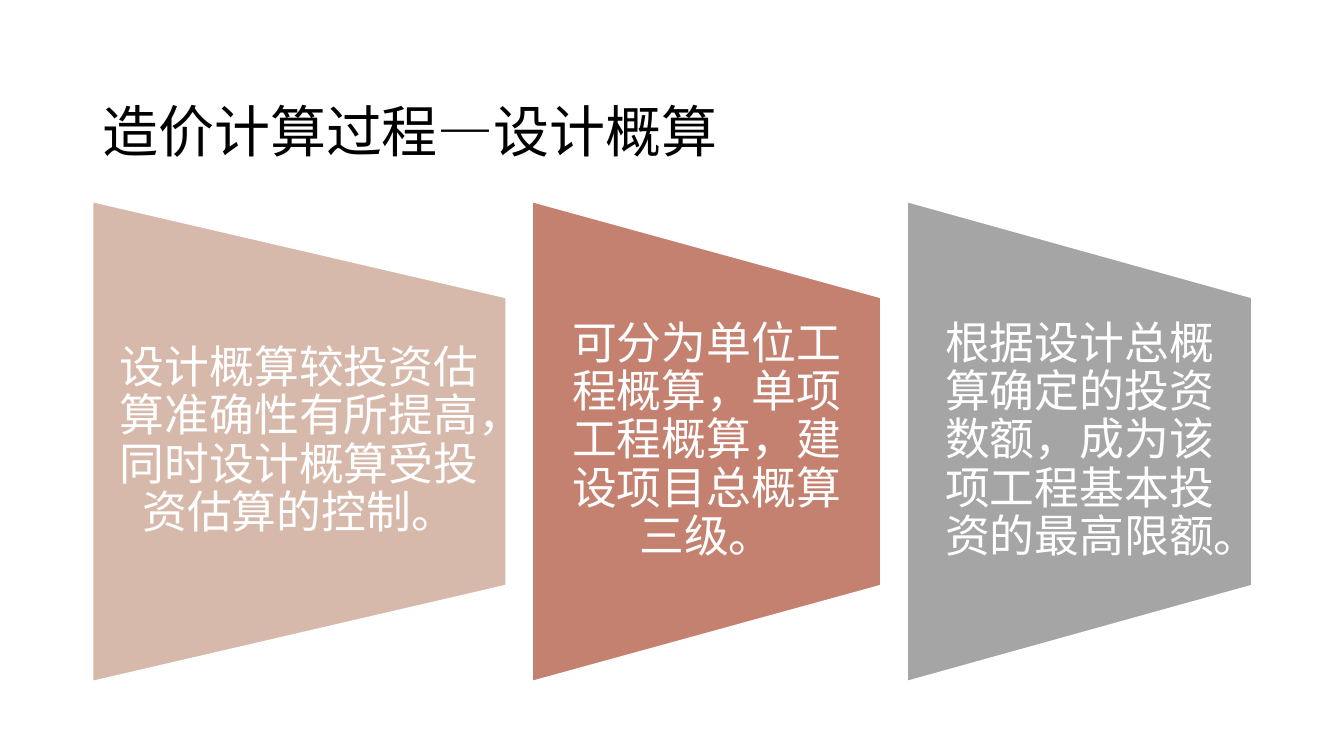
from dataclasses import dataclass

from lxml.etree import SubElement
from pptx import Presentation
from pptx.dml.color import RGBColor
from pptx.enum.shapes import MSO_SHAPE
from pptx.enum.text import MSO_ANCHOR, PP_ALIGN
from pptx.oxml.ns import qn
from pptx.slide import Slide
from pptx.util import Pt

CHINESE_FONT = "Noto Sans CJK SC"
WHITE = "FFFFFF"
PANELS_LEFT = 66.24
PANEL_GAP = 18.72
PANEL_HEIGHT = 342.72
PANEL_MIDDLE = 315.36
TEXT_HEIGHT = 205.92


@dataclass
class Panel:
    width: float
    fill: str
    text: str


@dataclass
class TextStyle:
    size: float
    font: str
    color: str
    alignment: PP_ALIGN
    line_spacing: float
    side_margin: float
    end_margin: float


TITLE_STYLE = TextStyle(40, "Times New Roman", "000000", PP_ALIGN.LEFT, 1.5, 7.2, 3.6)
PANEL_STYLE = TextStyle(32, CHINESE_FONT, WHITE, PP_ALIGN.CENTER, 0.9, 16, 0)

PANELS = [
    Panel(295.2, "D7B9AB", "设计概算较投资估算准确性有所提高，同时设计概算受投资估算的控制。"),
    Panel(249.12, "C48170", "可分为单位工程概算，单项工程概算，建设项目总概算三级。"),
    Panel(246.24, "A5A5A5", "根据设计总概算确定的投资数额，成为该项工程基本投资的最高限额。"),
]


def color(value: str) -> RGBColor:
    return RGBColor.from_string(value)


def add_text(slide: Slide, left: float, top: float, width: float, height: float,
             text: str, style: TextStyle) -> None:
    frame = slide.shapes.add_textbox(Pt(left), Pt(top), Pt(width), Pt(height)).text_frame
    frame.word_wrap = True
    frame.vertical_anchor = MSO_ANCHOR.MIDDLE
    frame.margin_left = frame.margin_right = Pt(style.side_margin)
    frame.margin_top = frame.margin_bottom = Pt(style.end_margin)
    paragraph = frame.paragraphs[0]
    paragraph.text = text
    paragraph.alignment = style.alignment
    paragraph.line_spacing = style.line_spacing
    paragraph.font.size = Pt(style.size)
    paragraph.font.color.rgb = color(style.color)
    paragraph.font.name = style.font
    properties = paragraph._p.get_or_add_pPr().find(qn("a:defRPr"))
    SubElement(properties, qn("a:ea"), typeface=CHINESE_FONT)


def add_panel(slide: Slide, left: float, panel: Panel) -> None:
    shape = slide.shapes.add_shape(
        MSO_SHAPE.FLOWCHART_MANUAL_OPERATION,
        Pt(left + (panel.width - PANEL_HEIGHT) / 2),
        Pt(PANEL_MIDDLE - panel.width / 2),
        Pt(PANEL_HEIGHT),
        Pt(panel.width),
    )
    shape.rotation = 270
    shape.shadow.inherit = False
    shape.fill.solid()
    shape.fill.fore_color.rgb = color(panel.fill)
    shape.line.color.rgb = color(WHITE)
    shape.line.width = Pt(1)
    add_text(slide, left, PANEL_MIDDLE - TEXT_HEIGHT / 2, panel.width, TEXT_HEIGHT,
             panel.text, PANEL_STYLE)


def main() -> None:
    presentation = Presentation()
    presentation.slide_width = Pt(960)
    presentation.slide_height = Pt(540)
    slide = presentation.slides.add_slide(presentation.slide_layouts[6])
    add_text(slide, 66, 28.8, 828, 104.4, "造价计算过程—设计概算", TITLE_STYLE)
    left = PANELS_LEFT
    for panel in PANELS:
        add_panel(slide, left, panel)
        left += panel.width + PANEL_GAP
    presentation.save("out.pptx")


if __name__ == "__main__":
    main()
